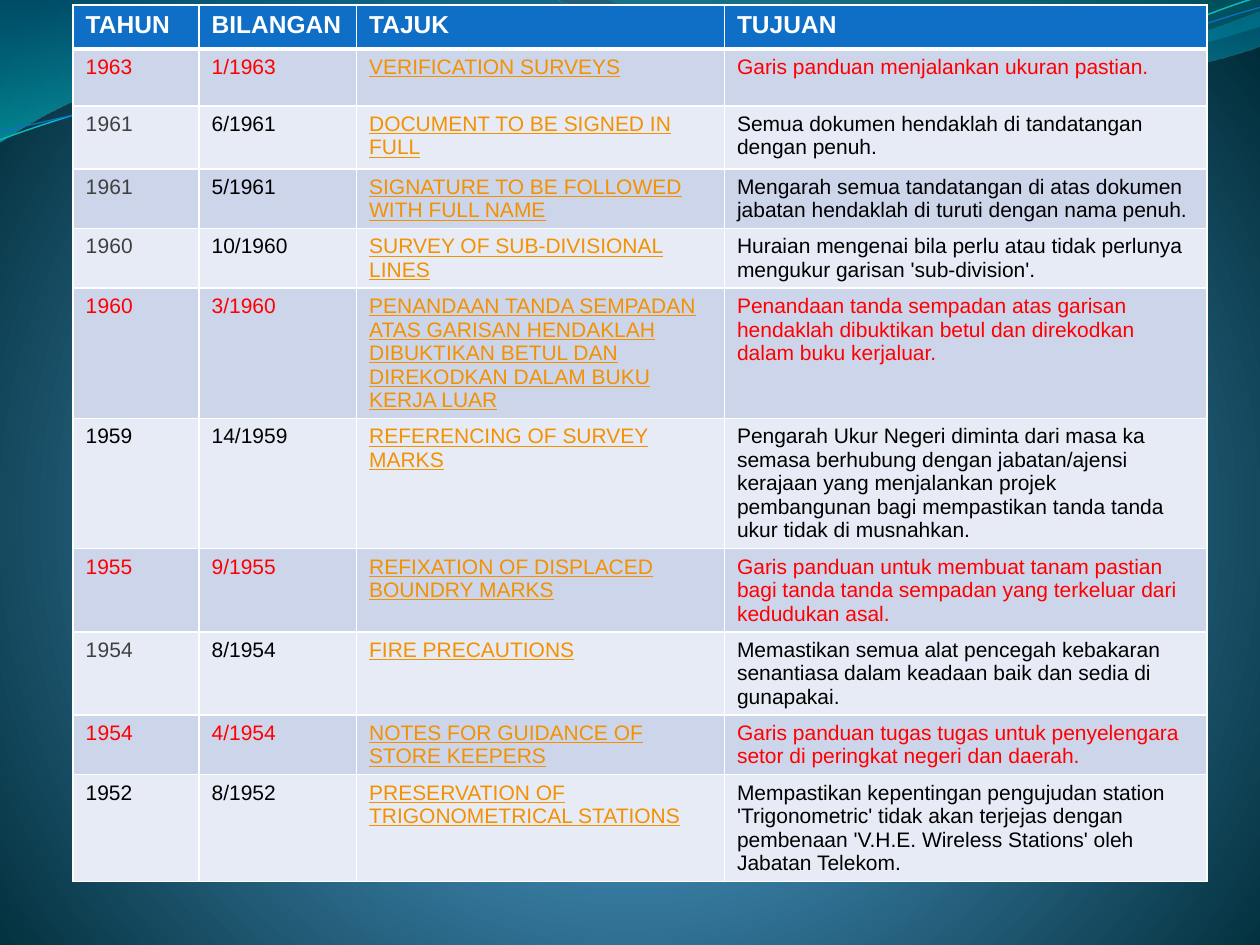
import math

import pptx
import pptx.dml.color
import pptx.oxml
import pptx.oxml.ns
import pptx.util

STEP = pptx.util.Inches(1)
WIDE, HIGH = 10, 7.5
FONT = "Arial"
TILT = 357.3
HUE = {
    "head": "0F6FC6", "odd": "CCD5EA", "even": "E7EBF5", "white": "FFFFFF",
    "red": "FF0000", "grey": "404040", "black": "000000", "link": "F49100",
    "sky": "4AA0D6", "mid": "4C98C7", "deep": "002C38", "teal": "0074A1",
    "aqua": "00C6CF", "sea": "00A1A9", "blue": "008BBF", "cyan": "0AB8BF",
}
COLS = [1, 1.25, 2.92, 3.83]
ROWS = [0.35, 0.45, 0.5, 0.4, 0.4, 0.53] + [0.4] * 5
HEADS = ["TAHUN", "BILANGAN", "TAJUK", "TUJUAN"]
DATA = [
    ("red", "1963", "1/1963", "VERIFICATION SURVEYS",
     "Garis panduan menjalankan ukuran pastian."),
    ("grey", "19|61", "6/1961", "DOCUMENT TO BE SIGNED IN FULL",
     "Semua dokumen hendaklah di tandatangan dengan penuh."),
    ("grey", "19|61", "5/1961", "SIGNATURE TO BE FOLLOWED WITH FULL NAME",
     "Mengarah semua tandatangan di atas dokumen jabatan hendaklah di turuti "
     "dengan nama penuh."),
    ("grey", "19|60", "10/1960", "SURVEY OF SUB-DIVISIONAL LINES",
     "Huraian mengenai bila perlu atau tidak perlunya mengukur garisan "
     "'sub-division'."),
    ("red", "19|60", "3/1960",
     "PENANDAAN TANDA SEMPADAN ATAS GARISAN HENDAKLAH DIBUKTIKAN BETUL DAN "
     "DIREKODKAN DALAM BUKU KERJA LUAR",
     "Penandaan tanda sempadan atas garisan hendaklah dibuktikan betul dan "
     "direkodkan dalam buku kerjaluar."),
    ("black", "1959", "14/1959", "REFERENCING OF SURVEY MARKS",
     "Pengarah Ukur Negeri diminta dari masa ka semasa berhubung dengan "
     "jabatan/ajensi kerajaan yang menjalankan projek pembangunan bagi "
     "mempastikan tanda tanda ukur tidak di musnahkan."),
    ("red", "1955", "9/1955", "REFIXATION OF DISPLACED BOUNDRY MARKS",
     "Garis panduan untuk membuat tanam pastian bagi tanda tanda sempadan "
     "yang terkeluar dari kedudukan asal."),
    ("grey", "19|54", "8/1954", "FIRE PRECAUTIONS",
     "Memastikan semua alat pencegah kebakaran senantiasa dalam keadaan baik "
     "dan sedia di gunapakai."),
    ("red", "19|54", "4/1954", "NOTES FOR GUIDANCE OF STORE KEEPERS",
     "Garis panduan tugas tugas untuk penyelengara setor di peringkat negeri "
     "dan daerah."),
    ("black", "1952", "8/1952", "PRESERVATION OF TRIGONOMETRICAL STATIONS",
     "Mempastikan kepentingan pengujudan station 'Trigonometric' tidak akan "
     "terjejas dengan pembenaan 'V.H.E. Wireless Stations' oleh Jabatan "
     "Telekom."),
]
BANDS = [
    ([("teal", 0, 45), ("aqua", 100, 55)],
     [(0, 0), (4.4, -0.01), (4.76, 0.17, 6.64, 0.63, 7.58, 0.63),
      (8.53, 0.63, 9.58, 0.26, 10, 0.09), (10.01, 0.36),
      (9.83, 0.44, 8.7, 0.76, 7.46, 0.75),
      (6.22, 0.75, 3.82, 0.28, 2.57, 0.34),
      (1.29, 0.36, 0.46, 0.83, -0.01, 1.13), (0, 0)]),
    ([("sea", 0, 30), ("blue", 80, 45)],
     [(4.79, -0.01), (5.09, 0.11, 6.82, 0.62, 7.69, 0.65),
      (8.56, 0.69, 9.61, 0.32, 10, 0.21), (10, 0), (4.79, -0.01)]),
]
LINES = [
    ("cyan", 0.85, (4.99, 0.57),
     [(0, 1.11), (0.48, 0.93, 1.58, 0.57, 2.77, 0.52),
      (3.95, 0.47, 5.93, 0.89, 7.13, 0.8),
      (8.33, 0.71, 9.38, 0.15, 9.98, -0.02)]),
    ("head", 0.75, (5, 0.59),
     [(0, 1.04), (0.47, 0.96, 1.64, 0.61, 2.83, 0.56),
      (4.03, 0.51, 5.97, 0.84, 7.17, 0.75),
      (8.36, 0.67, 9.41, 0.21, 10, 0.06)]),
]


def tone(name):
    return pptx.dml.color.RGBColor.from_string(HUE[name])


def blend(fill, root, stops, shade):
    fill.gradient()
    grad = root.find(".//" + pptx.oxml.ns.qn("a:gradFill"))
    for part in list(grad):
        grad.remove(part)
    marks = "".join(
        f'<a:gs pos="{at * 1000}"><a:srgbClr val="{HUE[name]}">'
        f'<a:alpha val="{pct * 1000}"/></a:srgbClr></a:gs>'
        for name, at, pct in stops)
    tree = pptx.oxml.parse_xml(
        f'<a:gradFill {pptx.oxml.ns.nsdecls("a")}>'
        f'<a:gsLst>{marks}</a:gsLst>{shade}</a:gradFill>')
    for part in list(tree):
        grad.append(part)


def split(knot):
    return list(zip(knot[::2], knot[1::2]))


def turn(knots, hub, angle):
    cos, sin = math.cos(math.radians(angle)), math.sin(math.radians(angle))
    out = []
    for knot in knots:
        flat = []
        for x, y in split(knot):
            dx, dy = x - hub[0], y - hub[1]
            flat += [hub[0] + dx * cos - dy * sin, hub[1] + dx * sin + dy * cos]
        out.append(tuple(flat))
    return out


def bend(shape, knots):
    legs = list(shape.element.iter(pptx.oxml.ns.qn("a:lnTo")))
    for knot in knots[1:]:
        size = len(knot) // 2
        group, legs = legs[:size], legs[size:]
        if size == 3:
            curve = pptx.oxml.parse_xml(
                f'<a:cubicBezTo {pptx.oxml.ns.nsdecls("a")}/>')
            group[0].addprevious(curve)
            for leg in group:
                curve.append(leg[0])
                leg.getparent().remove(leg)


def add_curve(slide, box, knots, close):
    dots = [(round((box[0] + x) * STEP), round((box[1] + y) * STEP))
            for knot in knots for x, y in split(knot)]
    pen = slide.shapes.build_freeform(*dots[0])
    pen.add_line_segments(dots[1:], close=close)
    shape = pen.convert_to_shape()
    bend(shape, knots)
    shape.shadow.inherit = False
    return shape


def add_back(slide):
    stops = [("sky", 0, 100), ("mid", 25, 100), ("deep", 100, 100)]
    blend(slide.background.fill, slide.element, stops,
          '<a:path path="circle"><a:fillToRect l="10000" t="110000" '
          'r="10000" b="100000"/></a:path>')


def add_waves(slide, box):
    for stops, knots in BANDS:
        band = add_curve(slide, box, knots, True)
        blend(band.fill, band.element, stops, '<a:lin ang="5400000" scaled="0"/>')
        band.line.fill.background()
    for name, size, hub, knots in LINES:
        line = add_curve(slide, box, turn(knots, hub, -TILT), False)
        line.rotation = TILT
        line.fill.background()
        line.line.color.rgb = tone(name)
        line.line.width = pptx.util.Pt(size)


def set_edge(cell, row):
    sizes = {"L": 1, "R": 1, "T": 3 if row == 1 else 1, "B": 3 if row == 0 else 1}
    props = cell._tc.get_or_add_tcPr()
    for i, (side, size) in enumerate(sizes.items()):
        props.insert(i, pptx.oxml.parse_xml(
            f'<a:ln{side} {pptx.oxml.ns.nsdecls("a")} w="{size * 12700}">'
            f'<a:solidFill><a:srgbClr val="{HUE["white"]}"/></a:solidFill>'
            f'</a:ln{side}>'))


def set_cell(cell, row, text, name, link=False):
    band = "head" if row == 0 else "odd" if row % 2 else "even"
    cell.fill.solid()
    cell.fill.fore_color.rgb = tone(band)
    set_edge(cell, row)
    parts = text.split("|")
    for i, part in enumerate(parts):
        run = cell.text_frame.paragraphs[0].add_run()
        run.text = part
        run.font.name = FONT
        run.font.size = pptx.util.Pt(12 if row else 14)
        run.font.bold = row == 0
        run.font.underline = link
        run.font.color.rgb = tone(name)
        if i < len(parts) - 1:
            run.font._element.set("spc", "10")


def add_list(slide, box):
    left, top, wide, high = (round(n * STEP) for n in box)
    table = slide.shapes.add_table(
        len(ROWS), len(COLS), left, top, wide, high).table
    for col, part in zip(table.columns, COLS):
        col.width = round(wide * part / sum(COLS))
    for row, part in zip(table.rows, ROWS):
        row.height = round(high * part / sum(ROWS))
    for c, text in enumerate(HEADS):
        set_cell(table.cell(0, c), 0, text, "white")
    for r, (name, *texts) in enumerate(DATA, 1):
        body = "red" if name == "red" else "black"
        for c, (text, hue) in enumerate(zip(texts, (name, body, "link", body))):
            set_cell(table.cell(r, c), r, text, hue, c == 2)


def main():
    deck = pptx.Presentation()
    deck.slide_width = round(WIDE * STEP)
    deck.slide_height = round(HIGH * STEP)
    slide = deck.slides.add_slide(deck.slide_layouts[6])
    add_back(slide)
    add_waves(slide, (0, 0))
    add_list(slide, (0.58, 0.04, sum(COLS), sum(ROWS)))
    deck.save("out.pptx")


if __name__ == "__main__":
    main()
